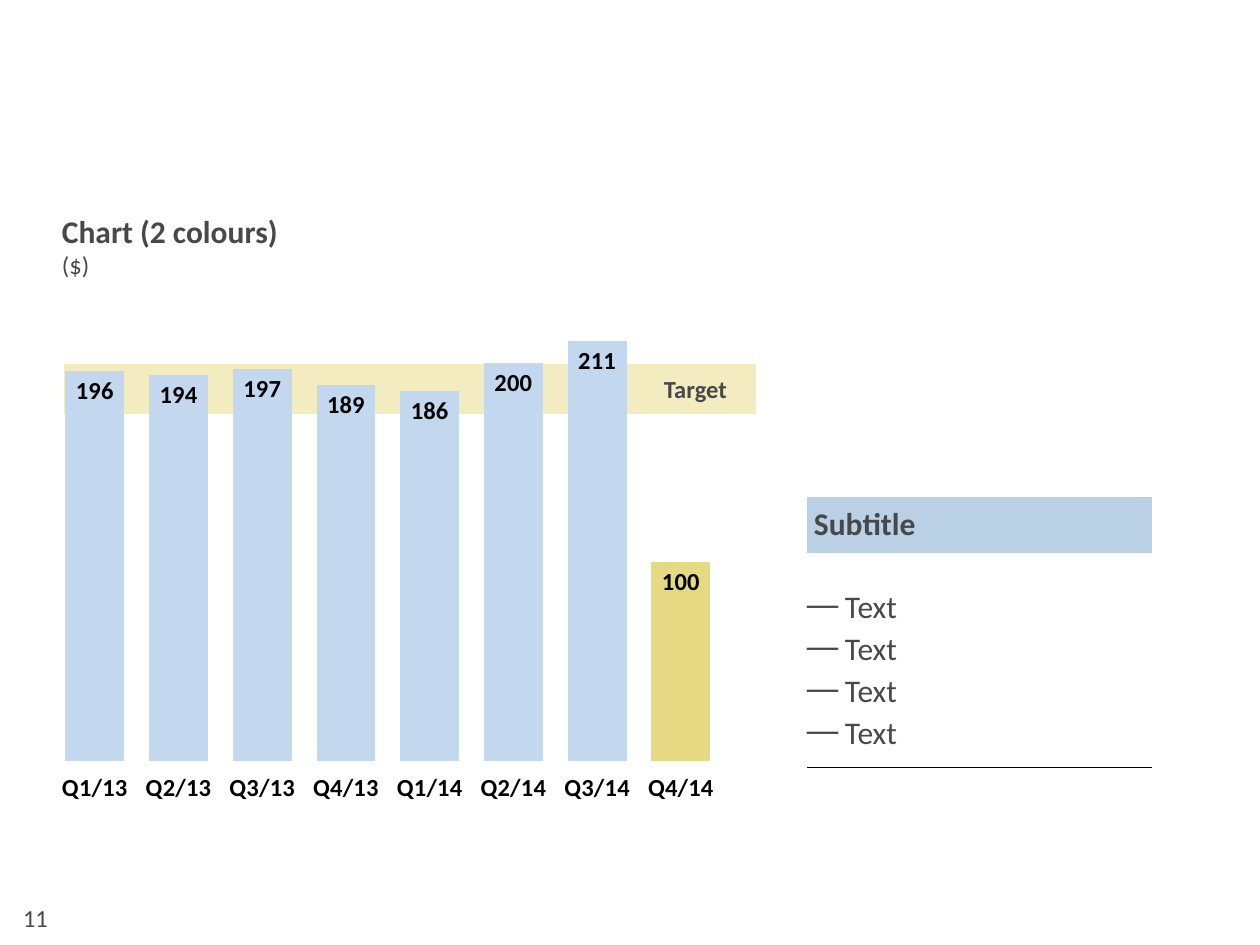
from lxml import etree
from pptx import Presentation
from pptx import util as u
from pptx.chart.data import CategoryChartData
from pptx.dml.color import RGBColor
from pptx.enum import chart as ch, shapes, text
from pptx.oxml import parse_xml
from pptx.oxml.ns import nsdecls, qn

SCALE = 914400 / 126
PLAIN = "{2D5ABB26-0587-4C30-8999-92F81FD0307C}"
GREY, BLACK = "484848", "000000"


def px(n):
    return u.Emu(round(n * SCALE))


def hue(code):
    return RGBColor.from_string(code)


def paint(fill, code):
    fill.solid()
    fill.fore_color.rgb = hue(code)


def inset(box, left, top, right, low):
    box.margin_left, box.margin_top = px(left), px(top)
    box.margin_right, box.margin_bottom = px(right), px(low)


class Deck:
    font = "Calibri"

    def __init__(self, wide, high):
        self.prs = Presentation()
        self.prs.slide_width, self.prs.slide_height = px(wide), px(high)
        self.slide = self.prs.slides.add_slide(self.prs.slide_layouts[6])
        self.shapes = self.slide.shapes

    def style(self, font, size, bold=False, color=GREY):
        font.name, font.size, font.bold = self.font, u.Pt(size), bold
        font.color.rgb = hue(color)

    def label(self, x, y, w, h, lines, pads=(13, 6, 13, 6), mid=False):
        """Add a text box; each line is (words, size, bold)."""
        frame = self.shapes.add_textbox(px(x), px(y), px(w), px(h)).text_frame
        frame.word_wrap = True
        inset(frame, *pads)
        if mid:
            frame.vertical_anchor = text.MSO_ANCHOR.MIDDLE
        frame.text = "\n".join(line[0] for line in lines)
        for para, (_, size, bold) in zip(frame.paragraphs, lines):
            self.style(para.runs[0].font, size, bold)

    def band(self, x, y, w, h, color):
        rect = self.shapes.add_shape(shapes.MSO_SHAPE.RECTANGLE, px(x), px(y), px(w), px(h))
        rect.shadow.inherit = False
        paint(rect.fill, color)
        rect.line.fill.background()

    def panel(self, x, y, w, rows, title, items):
        """Add a one-column table: a filled heading above a dashed list."""
        frame = self.shapes.add_table(2, 1, px(x), px(y), px(w), px(sum(rows)))
        table = frame.table
        table.horz_banding = table.first_row = False
        table._tbl.tblPr.find(qn("a:tableStyleId")).text = PLAIN
        table.columns[0].width = px(w)
        for row, high in zip(table.rows, rows):
            row.height = px(high)
        head, body = table.cell(0, 0), table.cell(1, 0)
        head.text = title
        head.vertical_anchor = text.MSO_ANCHOR.MIDDLE
        inset(head, 7, 5, 0, 5)
        paint(head.fill, "B9D0E5")
        self.style(head.text_frame.paragraphs[0].runs[0].font, 18, True)

        body.text = "\n".join(items)
        inset(body, 0, 36, 0, 12)
        body.fill.background()
        for i, para in enumerate(body.text_frame.paragraphs):
            props = para._p.get_or_add_pPr()
            props.set("marL", str(px(38)))
            props.set("indent", str(px(-38)))
            etree.SubElement(props, qn("a:buChar")).set("char", "—")
            para.space_before = u.Pt(2 if i else 0)
            self.style(para.runs[0].font, 18)
        edge = parse_xml(
            f'<a:lnB {nsdecls("a")} w="6350"><a:solidFill>'
            f'<a:srgbClr val="{BLACK}"/></a:solidFill></a:lnB>')
        body._tc.get_or_add_tcPr().insert(0, edge)

    def bars(self, x, y, w, h, names, values, color, last):
        """Add a column chart whose final column has its own colour."""
        data = CategoryChartData()
        data.categories = names
        data.add_series("Series 1", values)
        chart = self.shapes.add_chart(
            ch.XL_CHART_TYPE.COLUMN_STACKED, px(x), px(y), px(w), px(h), data).chart
        chart.has_legend = chart.has_title = False
        self.style(chart.font, 14, True, BLACK)
        axis = chart.value_axis
        axis.visible = axis.has_major_gridlines = False
        axis.minimum_scale, axis.maximum_scale, axis.major_unit = 0, 240, 20
        axis = chart.category_axis
        axis.format.line.fill.background()
        self.style(axis.tick_labels.font, 14, True, BLACK)

        plot = chart.plots[0]
        plot.gap_width, plot.overlap = 42, 100
        plot.vary_by_categories = False
        series = plot.series[0]
        paint(series.format.fill, color)
        paint(series.points[len(values) - 1].format.fill, last)
        tags = series.data_labels
        tags.show_value = True
        tags.position = ch.XL_LABEL_POSITION.INSIDE_END
        self.style(tags.font, 14, True, BLACK)
        self.place(chart, x=0.08, y=0.01, w=0.85, h=0.82)

    def place(self, chart, **parts):
        """Fix the inner plot area as fractions of the chart."""
        marks = "".join(f'<c:{k}Mode val="edge"/>' for k in "xy")
        sizes = "".join(f'<c:{k} val="{v}"/>' for k, v in parts.items())
        layout = parse_xml(
            f'<c:layout {nsdecls("c")}><c:manualLayout><c:layoutTarget val="inner"/>'
            f'{marks}{sizes}</c:manualLayout></c:layout>')
        area = chart._chartSpace.chart.plotArea
        for old in area.findall(qn("c:layout")):
            area.remove(old)
        area.insert(0, layout)


def main():
    deck = Deck(1260, 945)
    deck.label(10, 897, 96, 42, [("11", 14, False)])
    deck.panel(807, 497, 345, (56, 214), "Subtitle", ["Text"] * 4)
    deck.band(64, 364, 692, 50, "F2ECC0")
    names = [f"Q{q}/{year}" for year in (13, 14) for q in range(1, 5)]
    values = [196, 194, 197, 189, 186, 200, 211, 100]
    deck.bars(-10, 278, 788, 582, names, values, "C3D7EE", "E5D983")
    deck.label(651, 367, 95, 43, [("Target", 14, True)], mid=True)
    deck.label(62, 212, 630, 93, [("Chart (2 colours)", 18, True), ("($)", 14, False)],
               pads=(0, 0, 0, 0))
    deck.prs.save("out.pptx")


if __name__ == "__main__":
    main()
